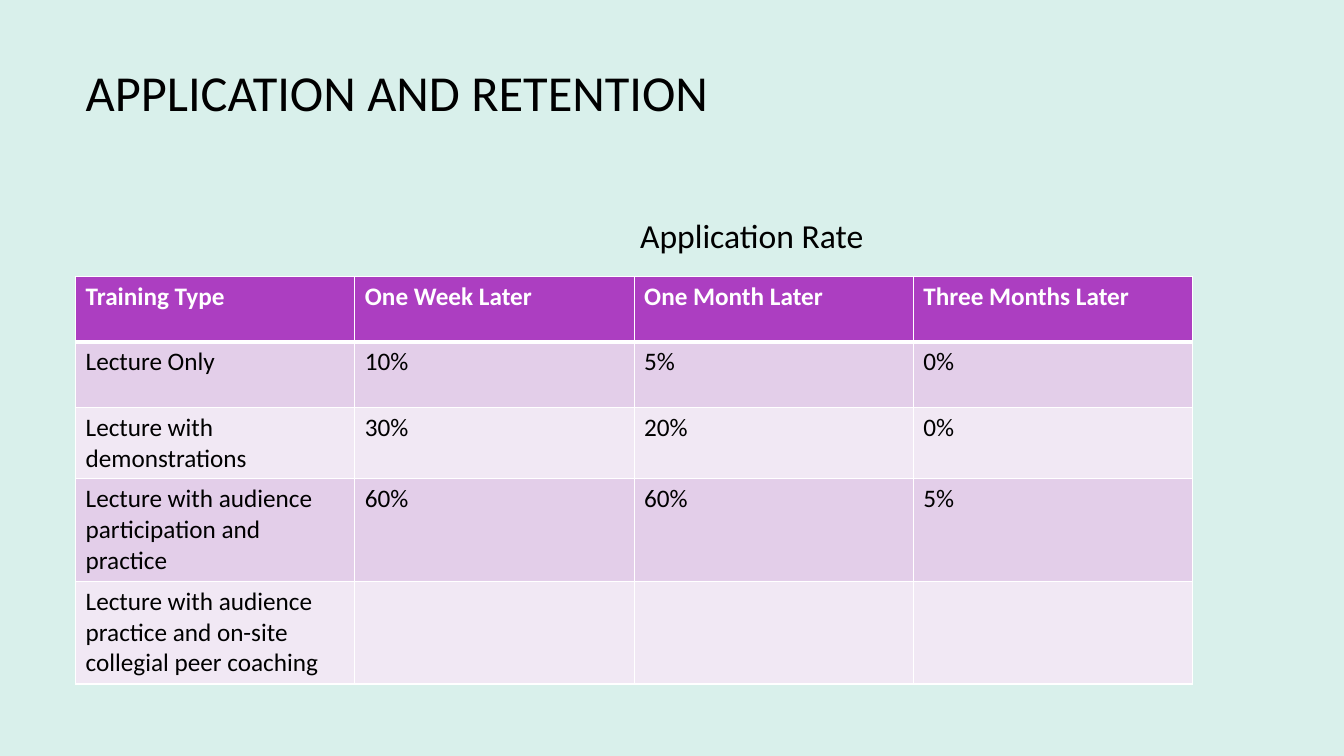
from lxml.etree import SubElement
from pptx import Presentation
from pptx.dml.color import RGBColor
from pptx.enum.text import MSO_ANCHOR as Anchor, PP_ALIGN as Align
from pptx.oxml.ns import qn
from pptx.util import Inches, Pt

MINT = RGBColor(0xD9, 0xF0, 0xEB)
PURPLE = RGBColor(0xAC, 0x3E, 0xC1)
LILAC = RGBColor(0xE3, 0xCE, 0xE9)
PALE_LILAC = RGBColor(0xF1, 0xE8, 0xF4)
BLACK = RGBColor(0, 0, 0)
WHITE = RGBColor(0xFF, 0xFF, 0xFF)

LEFT, WIDTH = 0.75, 11.08
ROW_HEIGHTS = (0.65, 0.65, 0.71, 1.01, 1.02)
TRAINING_RESULTS = (
    ("Training Type", "One Week Later", "One Month Later", "Three Months Later"),
    ("Lecture Only", "10%", "5%", "0%"),
    ("Lecture with demonstrations", "30%", "20%", "0%"),
    ("Lecture with audience participation and practice", "60%", "60%", "5%"),
    ("Lecture with audience practice and on-site collegial peer coaching", "", "", ""),
)


class SlideBuilder:
    """Holds the deck style and the slide being filled."""

    def __init__(self, deck, font="Calibri"):
        self.font = font
        self.slide = deck.slides.add_slide(deck.slide_layouts[5])
        self.slide.background.fill.solid()
        self.slide.background.fill.fore_color.rgb = MINT

    def set_text(self, frame, text, size, color=BLACK, bold=False):
        frame.text = text
        frame.word_wrap = True
        paragraph = frame.paragraphs[0]
        paragraph.alignment = Align.LEFT
        for run in paragraph.runs:
            run.font.name = self.font
            run.font.size = Pt(size)
            run.font.bold = bold
            run.font.color.rgb = color
        return paragraph

    def title(self, text, top, height):
        heading = self.slide.shapes.title
        heading.left, heading.top = Inches(LEFT), Inches(top)
        heading.width, heading.height = Inches(WIDTH), Inches(height)
        heading.text_frame.vertical_anchor = Anchor.MIDDLE
        self.set_text(heading.text_frame, text, 36)

    def caption(self, text, top, height, indent):
        box = self.slide.shapes.add_textbox(
            Inches(LEFT), Inches(top), Inches(WIDTH), Inches(height))
        box.text_frame.vertical_anchor = Anchor.MIDDLE
        paragraph = self.set_text(box.text_frame, text, 24)
        paragraph._p.get_or_add_pPr().set("marL", str(Inches(indent)))

    def border(self, cell, side, points):
        line = SubElement(cell._tc.get_or_add_tcPr(), qn(f"a:ln{side}"), w=str(Pt(points)))
        fill = SubElement(line, qn("a:solidFill"))
        SubElement(fill, qn("a:srgbClr"), val=str(WHITE))

    def cell(self, cell, text, row):
        header = row == 0
        thick_side = {0: "B", 1: "T"}.get(row)
        self.set_text(cell.text_frame, text, 18, WHITE if header else BLACK, header)
        for side in "LRTB":
            self.border(cell, side, 3 if side == thick_side else 1)
        cell.fill.solid()
        cell.fill.fore_color.rgb = PURPLE if header else LILAC if row % 2 else PALE_LILAC

    def table(self, rows, heights, top):
        grid = self.slide.shapes.add_table(
            len(rows), len(rows[0]), Inches(LEFT), Inches(top),
            Inches(WIDTH), Inches(sum(heights))).table
        for row, (texts, height) in enumerate(zip(rows, heights)):
            grid.rows[row].height = Inches(height)
            for column, text in enumerate(texts):
                self.cell(grid.cell(row, column), text, row)


def main():
    deck = Presentation()
    deck.slide_width, deck.slide_height = Inches(13.33), Inches(7.5)
    builder = SlideBuilder(deck)
    builder.title("APPLICATION AND RETENTION", top=0.11, height=1.59)
    builder.table(TRAINING_RESULTS, ROW_HEIGHTS, top=2.74)
    builder.caption("Application Rate", top=2.05, height=0.56, indent=5.5)
    deck.save("out.pptx")


if __name__ == "__main__":
    main()
